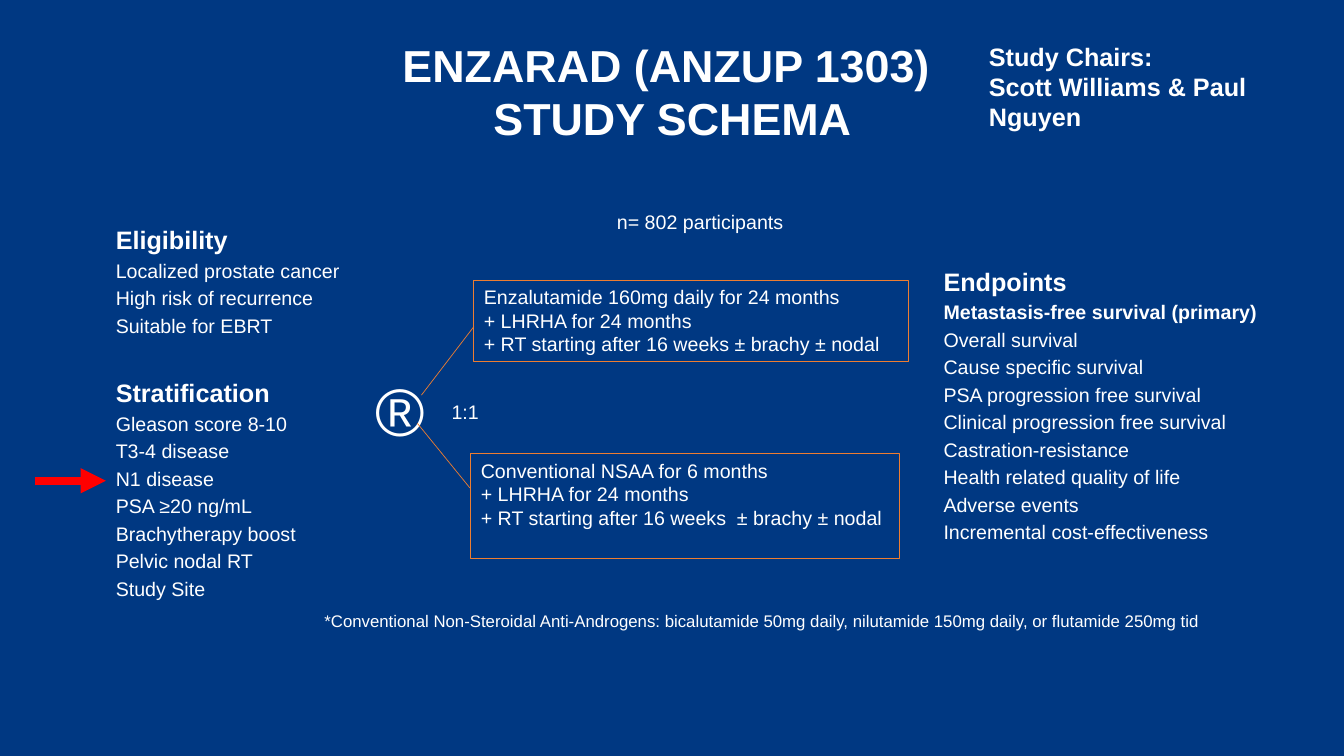
from lxml import etree
from pptx import Presentation
from pptx import util as u
from pptx.dml.color import RGBColor
from pptx.enum import shapes, text
from pptx.oxml.ns import qn

THEME = {
    "font": "Arial",
    "back": RGBColor(0x00, 0x38, 0x82),
    "text": RGBColor(0xFF, 0xFF, 0xFF),
    "line": RGBColor(0xED, 0x7D, 0x31),
    "arrow": RGBColor(0xFF, 0x00, 0x00),
    "title": 32, "head": 18, "body": 14, "note": 12, "symbol": 48,
}


def write(sp, lines, align=text.PP_ALIGN.LEFT, anchor=text.MSO_ANCHOR.TOP):
    tf = sp.text_frame
    frame = {"word_wrap": True, "auto_size": text.MSO_AUTO_SIZE.NONE,
             "vertical_anchor": anchor}
    for name, value in frame.items():
        setattr(tf, name, value)
    for i, (line, size, bold, before) in enumerate(lines):
        p = tf.add_paragraph() if i else tf.paragraphs[0]
        p.alignment = align
        p.space_before = u.Pt(before if i else 0)
        r = p.add_run()
        r.text = line
        style = {"name": THEME["font"], "size": u.Pt(THEME[size]), "bold": bold}
        for name, value in style.items():
            setattr(r.font, name, value)
        r.font.color.rgb = THEME["text"]


def connect(start, end, color, width):
    sp = s.shapes.add_connector(shapes.MSO_CONNECTOR.STRAIGHT,
                                *map(u.Inches, start + end))
    sp.line.color.rgb = THEME[color]
    sp.line.width = u.Pt(width)
    etree.SubElement(sp._element.spPr, qn("a:effectLst"))
    return sp


prs = Presentation()
prs.slide_width, prs.slide_height = u.Inches(13.33), u.Inches(7.5)
s = prs.slides.add_slide(prs.slide_layouts[5])
s.background.fill.solid()
s.background.fill.fore_color.rgb = THEME["back"]

title = s.shapes.title
title.left, title.top, title.width, title.height = map(u.Inches, (3.72, 0.32, 5.9, 1.18))
write(title, [(line, "title", True, 0) for line in ("ENZARAD (ANZUP 1303) ", "STUDY SCHEMA")],
      text.PP_ALIGN.CENTER)

columns = [
    ((1.05, 2.57, 3.07, 3.04), [
        ("Eligibility", ["Localized prostate cancer", "High risk of recurrence",
                         "Suitable for EBRT"]),
        ("Stratification", ["Gleason score 8-10", "T3-4 disease", "N1 disease",
                            "PSA ≥20 ng/mL", "Brachytherapy boost",
                            "Pelvic nodal RT", "Study Site"]),
    ]),
    ((9.26, 2.61, 3.36, 2.81), [
        ("Endpoints", ["Metastasis-free survival (primary)", "Overall survival",
                       "Cause specific survival", "PSA progression free survival",
                       "Clinical progression free survival", "Castration-resistance",
                       "Health related quality of life", "Adverse events",
                       "Incremental cost-effectiveness"]),
    ]),
]
for box, sections in columns:
    lines = []
    for heading, items in sections:
        lines.append((heading, "head", True, 28.8))
        lines += [(item, "body", "(primary)" in item, 2.8) for item in items]
    write(s.shapes.add_textbox(*map(u.Inches, box)), lines, anchor=text.MSO_ANCHOR.MIDDLE)

arms = [
    ((4.7, 2.78, 4.31, 0.81), ["Enzalutamide 160mg daily for 24 months",
                               "+ LHRHA for 24 months",
                               "+ RT starting after 16 weeks ± brachy ± nodal"]),
    ((4.67, 4.5, 4.25, 1.04), ["Conventional NSAA for 6 months",
                               "+ LHRHA for 24 months",
                               "+ RT starting after 16 weeks  ± brachy ± nodal"]),
]
for box, treatment in arms:
    sp = s.shapes.add_shape(shapes.MSO_SHAPE.RECTANGLE, *map(u.Inches, box))
    sp.shadow.inherit = False
    sp.fill.background()
    sp.line.color.rgb = THEME["line"]
    sp.line.width = u.Pt(0.75)
    write(sp, [(line, "body", False, 0) for line in treatment])

labels = [
    ((3.63, 3.61, 0.72, 0.91), ["®"], "symbol", False, text.PP_ALIGN.LEFT),
    ((6.02, 2.03, 2.08, 0.34), ["n= 802 participants"], "body", False, text.PP_ALIGN.LEFT),
    ((4.38, 3.92, 0.72, 0.34), ["1:1"], "body", False, text.PP_ALIGN.LEFT),
    ((2.93, 6.01, 9.26, 0.3),
     ["*Conventional Non-Steroidal Anti-Androgens: bicalutamide 50mg daily, "
      "nilutamide 150mg daily, or flutamide 250mg tid"],
     "note", False, text.PP_ALIGN.CENTER),
    ((9.71, 0.36, 3.42, 1.01), ["Study Chairs:", "Scott Williams & Paul Nguyen"],
     "head", True, text.PP_ALIGN.LEFT),
]
for box, lines, size, bold, align in labels:
    write(s.shapes.add_textbox(*map(u.Inches, box)),
          [(line, size, bold, 0) for line in lines], align)

connect((4.18, 3.92), (4.7, 3.24), "line", 0.5)
connect((4.14, 4.2), (4.66, 4.84), "line", 0.5)
arrow = connect((0.35, 4.77), (1.05, 4.77), "arrow", 6)
etree.SubElement(arrow.line._get_or_add_ln(), qn("a:tailEnd"), type="triangle")

prs.save("out.pptx")
